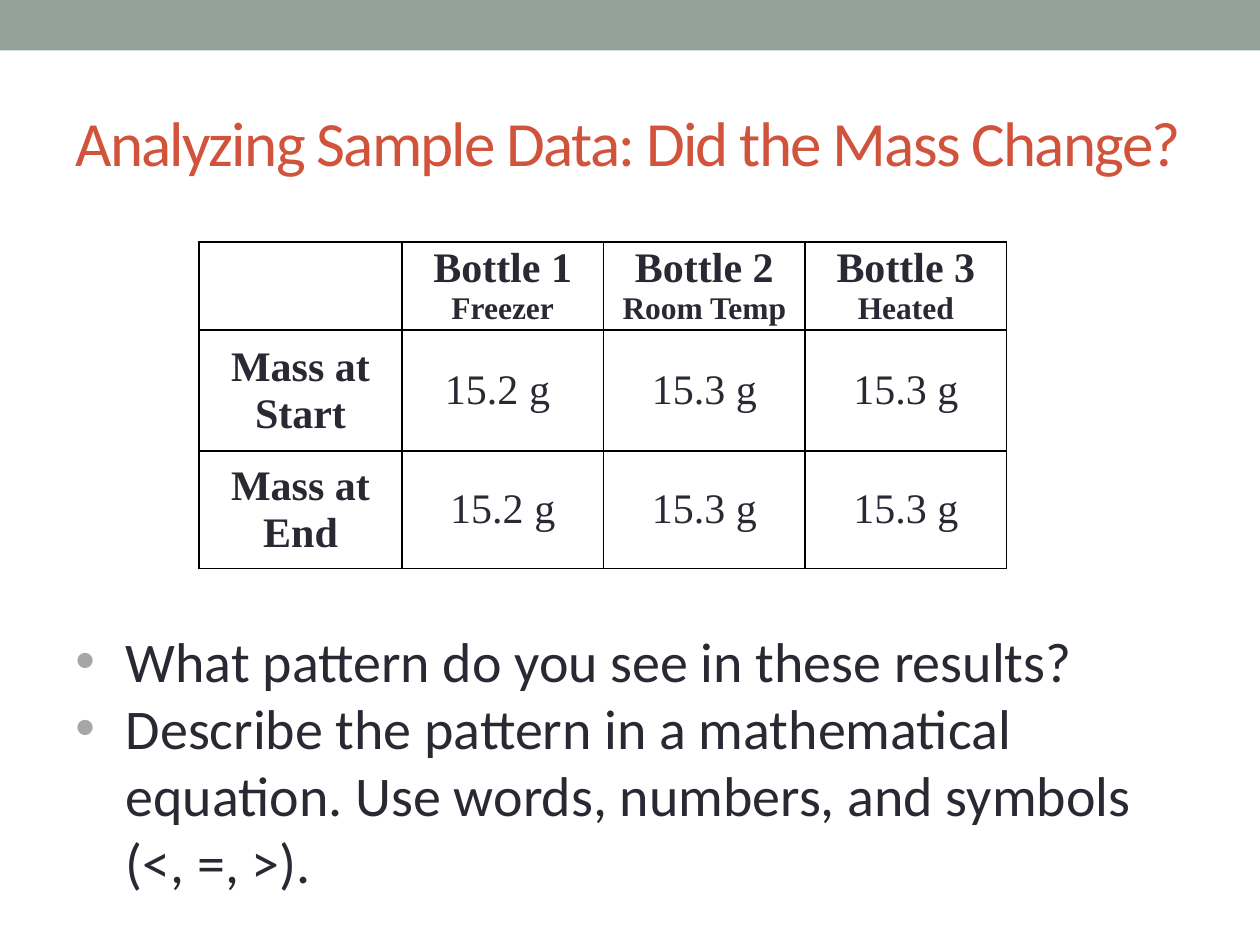
from lxml.etree import SubElement
from pptx import Presentation
from pptx.dml.color import RGBColor
from pptx.enum.shapes import MSO_SHAPE
from pptx.enum.text import MSO_ANCHOR, PP_ALIGN
from pptx.oxml.ns import qn
from pptx.util import Inches, Pt

COLORS = {"band": "93A299", "title": "D2533C", "text": "292934",
          "bullet": "A6A6A6", "border": "000000"}
TITLE = "Analyzing Sample Data: Did the Mass Change?"
MASSES = [
    ["", "Bottle 1\nFreezer", "Bottle 2\nRoom Temp", "Bottle 3\nHeated"],
    ["Mass at Start", "15.2 g ", "15.3 g", "15.3 g"],
    ["Mass at End", "15.2 g", "15.3 g", "15.3 g"],
]
COLUMN_WIDTHS = [1.61, 1.6, 1.6, 1.6]
ROW_HEIGHTS = [0.7, 0.96, 0.93]
QUESTIONS = [
    "What pattern do you see in these results?",
    "Describe the pattern in a mathematical equation. "
    "Use words, numbers, and symbols (<, =, >).",
]


def rgb(name):
    return RGBColor.from_string(COLORS[name])


def style(paragraph, size, color="text", face="Calibri", bold=False):
    for run in paragraph.runs:
        run.font.size = Pt(size)
        run.font.name = face
        run.font.bold = bold
        run.font.color.rgb = rgb(color)


def add_text_frame(slide, left, top, width, height):
    box = slide.shapes.add_textbox(*map(Inches, (left, top, width, height)))
    box.text_frame.word_wrap = True
    return box.text_frame


def add_borders(cell):
    properties = cell._tc.get_or_add_tcPr()
    for side in ("a:lnL", "a:lnR", "a:lnT", "a:lnB"):
        line = SubElement(properties, qn(side), w=str(Pt(1)))
        fill = SubElement(line, qn("a:solidFill"))
        SubElement(fill, qn("a:srgbClr"), val=COLORS["border"])


def add_bullet(paragraph):
    properties = paragraph._p.get_or_add_pPr()
    properties.set("marL", str(Inches(0.4)))
    properties.set("indent", str(Inches(-0.4)))
    color = SubElement(properties, qn("a:buClr"))
    SubElement(color, qn("a:srgbClr"), val=COLORS["bullet"])
    SubElement(properties, qn("a:buFont"), typeface="Arial")
    SubElement(properties, qn("a:buChar"), char="•")


presentation = Presentation()
presentation.slide_width, presentation.slide_height = Inches(10), Inches(7.5)
slide = presentation.slides.add_slide(presentation.slide_layouts[6])

# Top band
band = slide.shapes.add_shape(MSO_SHAPE.RECTANGLE, 0, 0, Inches(10), Inches(0.4))
band.shadow.inherit = False
band.fill.solid()
band.fill.fore_color.rgb = rgb("band")
band.line.fill.background()

# Title, with tightened letter spacing
title = add_text_frame(slide, 0.5, 0.58, 9, 1.08)
title.vertical_anchor = MSO_ANCHOR.MIDDLE
title.text = TITLE
style(title.paragraphs[0], 36, "title")
title.paragraphs[0].runs[0].font._element.set("spc", "-100")

# Table of masses
table = slide.shapes.add_table(
    len(MASSES), len(MASSES[0]), Inches(1.58), Inches(1.92),
    Inches(sum(COLUMN_WIDTHS)), Inches(sum(ROW_HEIGHTS))).table
table.first_row = table.horz_banding = False
for column, width in zip(table.columns, COLUMN_WIDTHS):
    column.width = Inches(width)
for r, (values, height) in enumerate(zip(MASSES, ROW_HEIGHTS)):
    table.rows[r].height = Inches(height)
    for c, value in enumerate(values):
        cell = table.cell(r, c)
        add_borders(cell)
        cell.fill.background()
        cell.vertical_anchor = MSO_ANCHOR.MIDDLE
        cell.margin_left = cell.margin_right = Inches(0.07)
        cell.margin_top = cell.margin_bottom = 0
        cell.text_frame.text = value
        for paragraph, size in zip(cell.text_frame.paragraphs, (24, 18)):
            paragraph.alignment = PP_ALIGN.CENTER
            style(paragraph, size, face="Times New Roman", bold=r == 0 or c == 0)

# Questions
questions = add_text_frame(slide, 0.5, 4.92, 9, 2.26)
questions.text = "\n".join(QUESTIONS)
for paragraph in questions.paragraphs:
    add_bullet(paragraph)
    style(paragraph, 32)

presentation.save("out.pptx")
